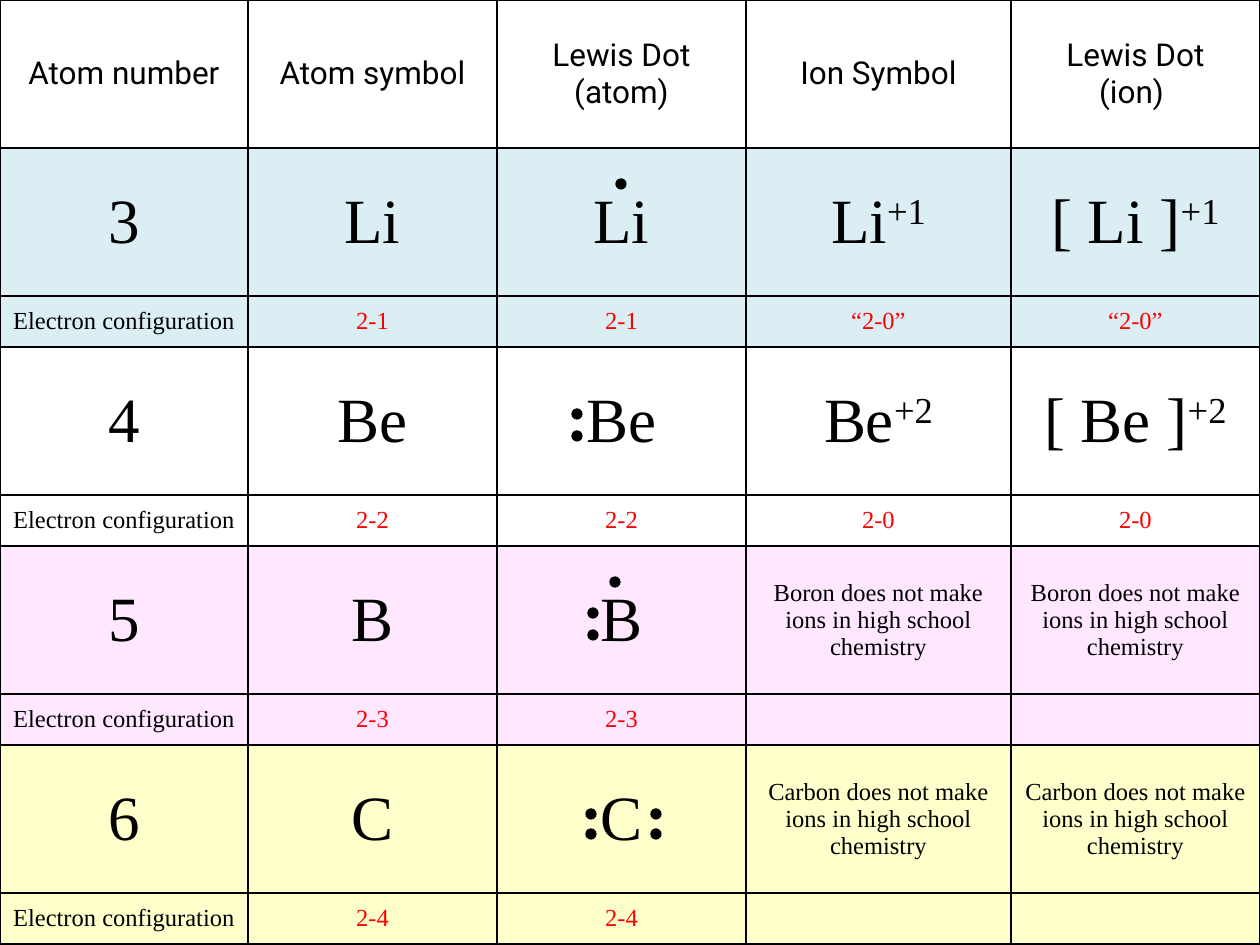
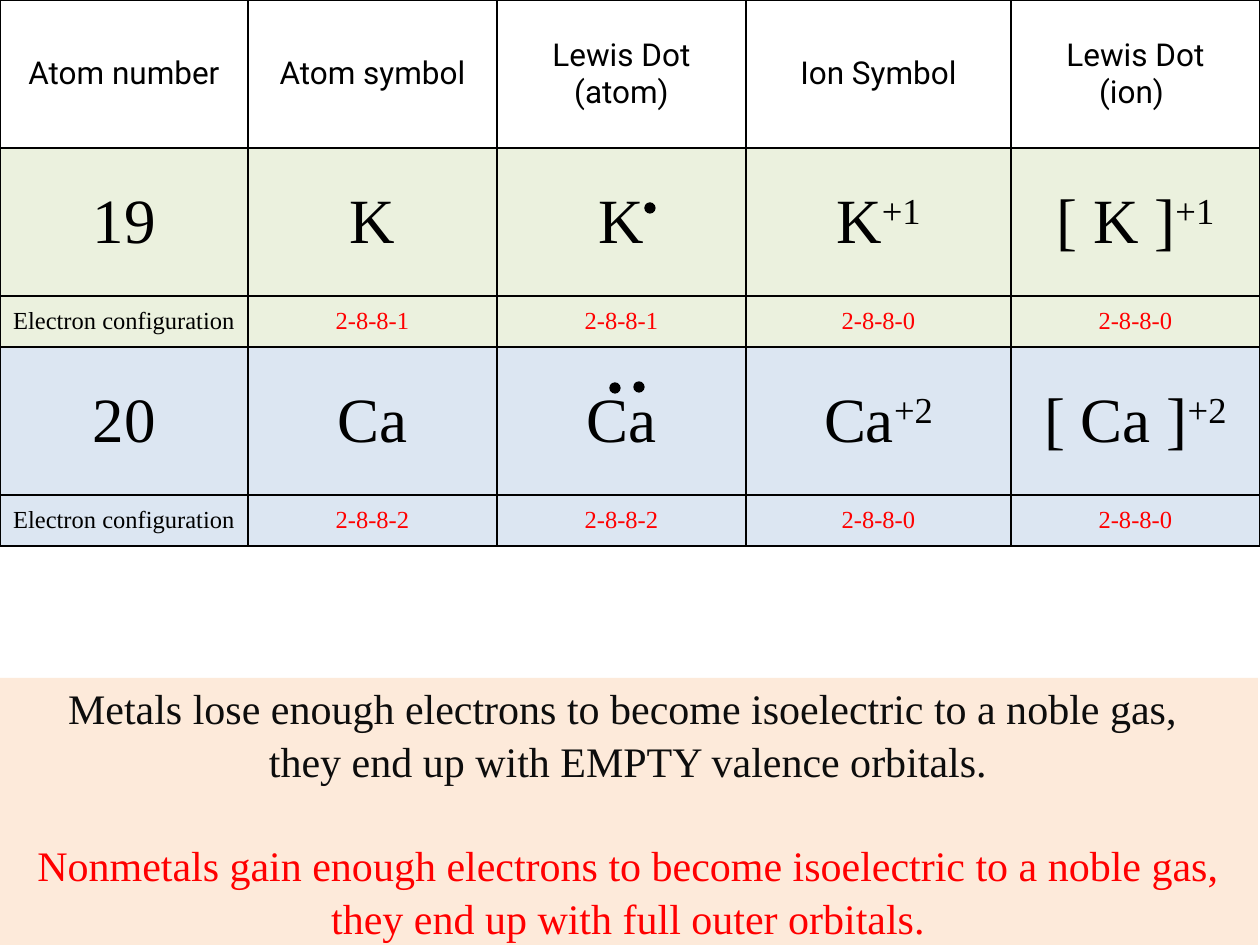
from dataclasses import dataclass
from itertools import accumulate

from lxml.etree import SubElement
from pptx import Presentation
from pptx.dml.color import RGBColor
from pptx.enum.shapes import MSO_SHAPE as Shape
from pptx.enum.text import MSO_ANCHOR as Anchor, PP_ALIGN as Align
from pptx.oxml.ns import qn
from pptx.util import Emu, Pt

PX_PER_INCH = 126
COLORS = {
    "ink": "000000", "config": "FF0000", "banner_ink": "0D0D0D",
    "lithium": "DBEEF4", "boron": "FFE7FF", "carbon": "FFFFCC",
    "potassium": "EBF1DE", "calcium": "DCE6F2", "banner": "FDEADA",
}
HEADING_FONT, BODY_FONT = "Roboto", "Times New Roman"
HEADINGS = ["Atom number", "Atom symbol", "Lewis Dot\n(atom)", "Ion Symbol", "Lewis Dot\n(ion) "]
COLUMN_WIDTHS = [248, 249, 249, 265, 249]
SYMBOL_HEIGHT, CONFIG_HEIGHT = 148, 51
LEWIS_COLUMN = 2
DOT_SIZE = 10


@dataclass
class Element:
    number: int
    name: str
    symbol: str
    config: str
    dots: list
    charge: str = ""
    ion_config: str = ""
    fill: str = ""


def side_pair(x, top=62):
    return [(x, top), (x, 84)]


PERIOD_TWO = [
    Element(3, "Lithium", "Li", "2-1", [(119, 31)], "+1", "“2-0”", "lithium"),
    Element(4, "Beryllium", "Be", "2-2", side_pair(75), "+2", "2-0"),
    Element(5, "Boron", "B", "2-3", side_pair(91) + [(113, 31)], fill="boron"),
    Element(6, "Carbon", "C", "2-4", side_pair(89, 64) + side_pair(154, 64), fill="carbon"),
]
PERIOD_FOUR = [
    Element(19, "Potassium", "K", "2-8-8-1", [(148, 55)], "+1", "2-8-8-0", "potassium"),
    Element(20, "Calcium", "Ca", "2-8-8-2", [(137, 35), (113, 36)], "+2", "2-8-8-0", "calcium"),
]


def px(length):
    return Emu(round(length * 914400 / PX_PER_INCH))


def color(name):
    return RGBColor.from_string(COLORS[name])


def style_paragraph(paragraph, size, font=BODY_FONT, ink="ink"):
    paragraph.alignment = Align.CENTER
    paragraph.font.size = Pt(size)
    paragraph.font.name = font
    paragraph.font.color.rgb = color(ink)


def set_borders(cell):
    properties = cell._tc.get_or_add_tcPr()
    for side in ("lnL", "lnR", "lnT", "lnB"):
        line = SubElement(properties, qn(f"a:{side}"), w=str(Pt(1)))
        fill = SubElement(line, qn("a:solidFill"))
        SubElement(fill, qn("a:srgbClr"), val=COLORS["ink"])


def fill_cell(cell, text, size, font=BODY_FONT, ink="ink", fill="", charge=""):
    set_borders(cell)
    if fill:
        cell.fill.solid()
        cell.fill.fore_color.rgb = color(fill)
    else:
        cell.fill.background()
    cell.vertical_anchor = Anchor.MIDDLE
    cell.margin_top = cell.margin_bottom = 0
    paragraph = cell.text_frame.paragraphs[0]
    paragraph.text = text
    style_paragraph(paragraph, size, font, ink)
    if charge:
        run = paragraph.add_run()
        run.text = charge
        run._r.get_or_add_rPr().set("baseline", "30000")


def fill_element_rows(table, row, element):
    fill = element.fill
    for column, text in enumerate([str(element.number), element.symbol, element.symbol]):
        fill_cell(table.cell(row, column), text, 36, fill=fill)
    for column, ion in ((3, element.symbol), (4, f"[ {element.symbol} ]")):
        if element.charge:
            fill_cell(table.cell(row, column), ion, 36, fill=fill, charge=element.charge)
        else:
            note = f"{element.name} does not make ions in high school chemistry"
            fill_cell(table.cell(row, column), note, 14, fill=fill)
    fill_cell(table.cell(row + 1, 0), "Electron configuration", 14, fill=fill)
    for column, config in enumerate([element.config] * 2 + [element.ion_config] * 2, start=1):
        fill_cell(table.cell(row + 1, column), config, 14, ink="config", fill=fill)


def add_dots(slide, left, top, dots):
    for x, y in dots:
        dot = slide.shapes.add_shape(Shape.OVAL, px(left + x), px(top + y), px(DOT_SIZE), px(DOT_SIZE))
        dot.shadow.inherit = False
        dot.fill.solid()
        dot.fill.fore_color.rgb = color("ink")
        dot.line.color.rgb = color("ink")
        dot.line.width = Pt(0.75)


def add_element_table(slide, left, top, elements):
    heights = [SYMBOL_HEIGHT] + [SYMBOL_HEIGHT, CONFIG_HEIGHT] * len(elements)
    frame = slide.shapes.add_table(len(heights), len(COLUMN_WIDTHS), px(left), px(top),
                                   px(sum(COLUMN_WIDTHS)), px(sum(heights)))
    table = frame.table
    table.first_row = table.horz_banding = False
    for column, width in zip(table.columns, COLUMN_WIDTHS):
        column.width = px(width)
    for row, height in zip(table.rows, heights):
        row.height = px(height)
    for column, heading in enumerate(HEADINGS):
        fill_cell(table.cell(0, column), heading, 18, HEADING_FONT)

    row_tops = list(accumulate(heights, initial=top))
    lewis_left = left + sum(COLUMN_WIDTHS[:LEWIS_COLUMN])
    for index, element in enumerate(elements):
        row = 1 + 2 * index
        fill_element_rows(table, row, element)
        add_dots(slide, lewis_left, row_tops[row], element.dots)


def add_summary_banner(slide, left, top, width, height):
    banner = slide.shapes.add_shape(Shape.RECTANGLE, px(left), px(top), px(width), px(height))
    banner.shadow.inherit = False
    banner.fill.solid()
    banner.fill.fore_color.rgb = color("banner")
    banner.line.fill.background()
    text_frame = banner.text_frame
    text_frame.word_wrap = True
    text_frame.vertical_anchor = Anchor.MIDDLE
    metals, nonmetals = text_frame.paragraphs[0], text_frame.add_paragraph()
    metals.text = ("Metals lose enough electrons to become isoelectric to a noble gas, \n"
                   "they end up with EMPTY valence orbitals.")
    nonmetals.text = ("Nonmetals gain enough electrons to become isoelectric to a noble gas, "
                      "they end up with full outer orbitals.")
    for paragraph, ink in ((metals, "banner_ink"), (nonmetals, "config")):
        style_paragraph(paragraph, 24, ink=ink)
        paragraph.line_spacing = 1.05
    nonmetals.space_before = Pt(29)


def main():
    presentation = Presentation()
    presentation.slide_width, presentation.slide_height = px(1260), px(945)
    blank = presentation.slide_layouts[6]
    add_element_table(presentation.slides.add_slide(blank), 0, 0, PERIOD_TWO)
    slide = presentation.slides.add_slide(blank)
    add_element_table(slide, 0, 0, PERIOD_FOUR)
    add_summary_banner(slide, -2, 678, 1260, 267)
    presentation.save("out.pptx")


if __name__ == "__main__":
    main()
